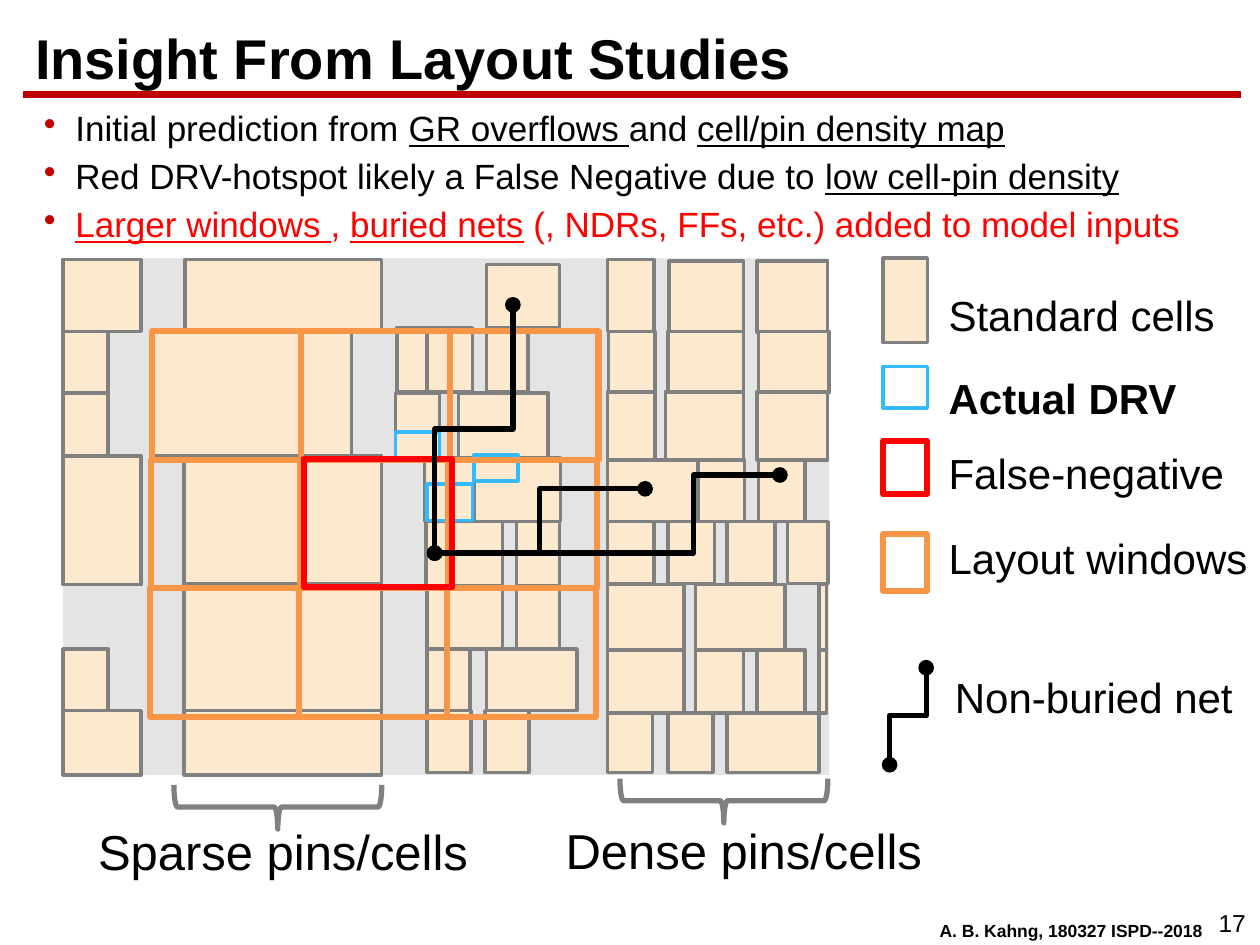
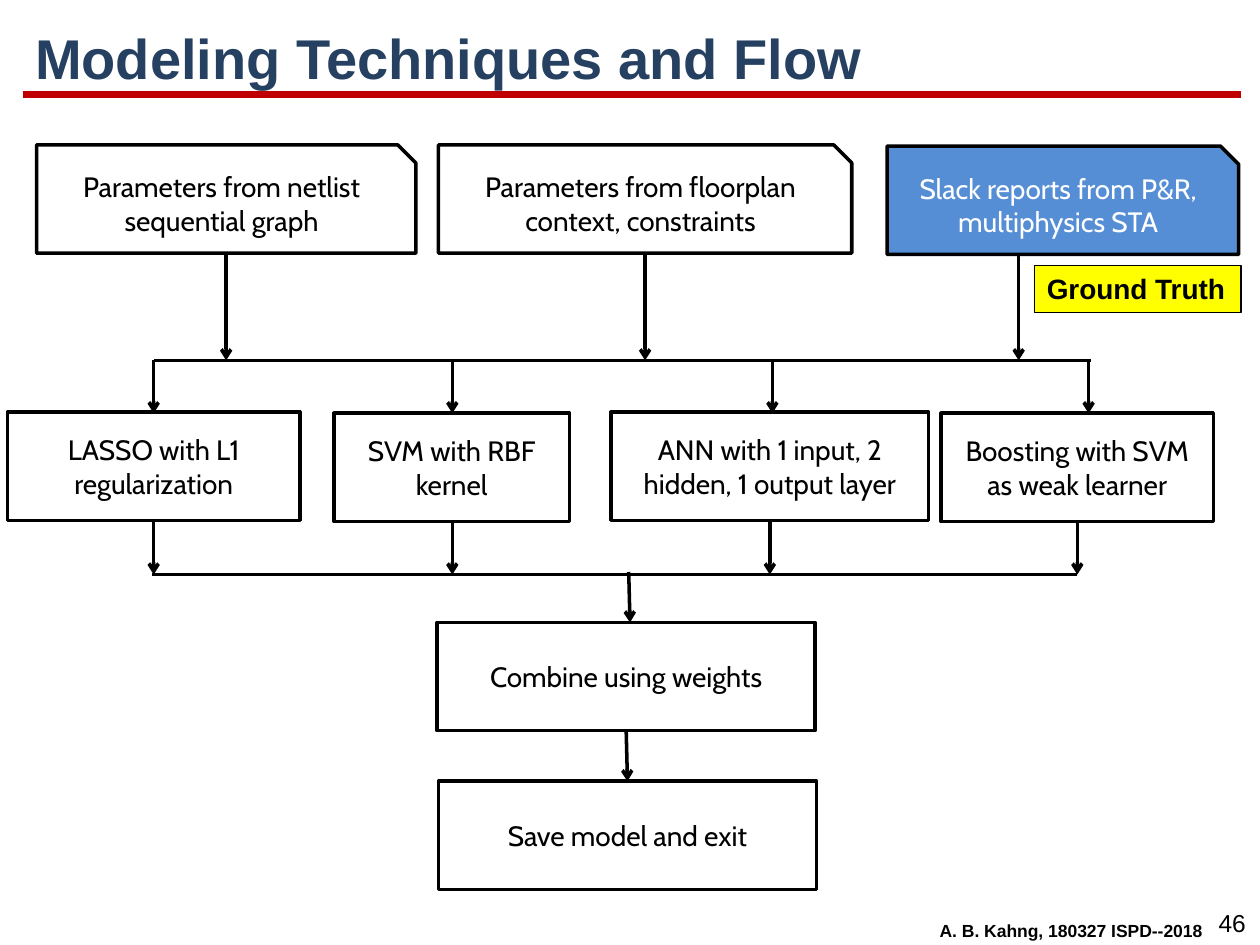
from pptx import Presentation
from pptx.dml.color import RGBColor
from pptx.enum.shapes import MSO_CONNECTOR, MSO_SHAPE
from pptx.enum.text import MSO_ANCHOR, PP_ALIGN
from pptx.oxml.ns import qn
from pptx.util import Inches, Pt
from lxml import etree

RECT = MSO_SHAPE.RECTANGLE
SNIP = MSO_SHAPE.SNIP_1_RECTANGLE
BRACE = MSO_SHAPE.LEFT_BRACE
LINE = MSO_CONNECTOR.STRAIGHT
ELBOW = MSO_CONNECTOR.ELBOW
LEFT = PP_ALIGN.LEFT
CENTER = PP_ALIGN.CENTER
TOP = MSO_ANCHOR.TOP
MIDDLE = MSO_ANCHOR.MIDDLE

BLACK = "000000"
WHITE = "FFFFFF"
NAVY = "254061"
DARK_RED = "C00000"
RED = "FF0000"
GRAY = "808080"
PALE = "E4E4E4"
CREAM = "FDE9CD"
SKY = "34BBFF"
ORANGE = "F79646"
BLUE = "558ED5"
YELLOW = "FFFF00"


def paint(code):
    return RGBColor.from_string(code)


def add_node(parent, tag, **attrs):
    return etree.SubElement(parent, qn(tag), attrs)


class Deck:
    font = "Arial"
    flow_font = "Cabin"
    credit = "A. B. Kahng, 180327 ISPD--2018"

    def __init__(self):
        self.show = Presentation()
        self.show.slide_width = Inches(10)
        self.show.slide_height = Inches(7.5)
        self.slide = None

    def start(self, title, number, color=BLACK):
        self.slide = self.show.slides.add_slide(self.show.slide_layouts[6])
        self.line((0.18, 0.75), (9.85, 0.75), DARK_RED, 4.5)
        self.label((9.56, 7.16, 0.44, 0.34), number, 14, align=CENTER, wrap=False)
        self.label((7.35, 7.25, 2.3, 0.27), self.credit, 10, align=CENTER,
                   wrap=False, bold=True)
        box = self.label((0.18, 0.16, 9.68, 0.65), title, 32, color,
                         anchor=MIDDLE, bold=True)
        box.text_frame.paragraphs[0].line_spacing = 0.9

    def piece(self, para, text, color=BLACK, **fmt):
        run = para.add_run()
        run.text = text
        run.font.color.rgb = paint(color)
        for key, value in fmt.items():
            setattr(run.font, key, value)

    def letter(self, shape, text, size, color=BLACK, align=LEFT, anchor=TOP,
               wrap=True, name=font, **fmt):
        frame = shape.text_frame
        frame.word_wrap = wrap
        frame.vertical_anchor = anchor
        para = frame.paragraphs[0]
        para.alignment = align
        self.piece(para, text, color, name=name, size=Pt(size), **fmt)

    def label(self, area, text, size, color=BLACK, **fmt):
        box = self.slide.shapes.add_textbox(*map(Inches, area))
        self.letter(box, text, size, color, **fmt)
        return box

    def points(self, area, items, size):
        frame = self.slide.shapes.add_textbox(*map(Inches, area)).text_frame
        frame.word_wrap = True
        for i, (color, parts) in enumerate(items):
            para = frame.add_paragraph() if i else frame.paragraphs[0]
            props = para._p.get_or_add_pPr()
            props.set("marL", str(Inches(0.25)))
            props.set("indent", str(-Inches(0.25)))
            add_node(add_node(props, "a:buClr"), "a:srgbClr", val=DARK_RED)
            add_node(props, "a:buChar", char="•")
            para.line_spacing = 0.85
            para.space_before = Pt(7 if i else 0)
            for text, under in parts:
                self.piece(para, text, color, name=self.font, size=Pt(size),
                           underline=under)

    def shape(self, area, fill=None, edge=None, width=2, kind=RECT, turn=0):
        shape = self.slide.shapes.add_shape(kind, *map(Inches, area))
        shape.shadow.inherit = False
        shape.rotation = turn
        if fill:
            shape.fill.solid()
            shape.fill.fore_color.rgb = paint(fill)
        else:
            shape.fill.background()
        if edge:
            shape.line.color.rgb = paint(edge)
            shape.line.width = Pt(width)
        else:
            shape.line.fill.background()
        return shape

    def step(self, area, text, kind=RECT, fill=None, color=BLACK):
        shape = self.shape(area, fill, BLACK, kind=kind)
        self.letter(shape, text, 16, color, align=CENTER, anchor=MIDDLE,
                    name=self.flow_font)

    def line(self, begin, end, color=BLACK, width=2, head=None, tail=None,
             kind=LINE):
        line = self.slide.shapes.add_connector(
            kind, *map(Inches, (*begin, *end)))
        line.line.color.rgb = paint(color)
        line.line.width = Pt(width)
        stroke = line.line._get_or_add_ln()
        for tag, mark in (("a:headEnd", head), ("a:tailEnd", tail)):
            if mark:
                add_node(stroke, tag, type=mark)
        add_node(line._element.spPr, "a:effectLst")
        return line

    def arrow(self, begin, end):
        self.line(begin, end, tail="arrow")

    def net(self, begin, end, bend=0.5, upright=False):
        if upright:
            mid_x = (begin[0] + end[0]) / 2
            mid_y = (begin[1] + end[1]) / 2
            begin, end = [(mid_x + y - mid_y, mid_y - x + mid_x)
                          for x, y in (begin, end)]
        wire = self.line(begin, end, width=3, head="oval", tail="oval", kind=ELBOW)
        props = wire._element.spPr
        if upright:
            props.find(qn("a:xfrm")).set("rot", "5400000")
        guides = props.find(qn("a:prstGeom")).find(qn("a:avLst"))
        add_node(guides, "a:gd", name="adj1", fmla=f"val {round(bend * 100000)}")


CELLS = [
    (2.06, 0.57, [(0.5, 0.62), (1.47, 1.56), (4.82, 0.37)]),
    (2.07, 0.57, [(5.31, 0.59), (6.01, 0.56)]),
    (2.1, 0.5, [(3.86, 0.58)]),
    (2.6, 0.51, [(3.15, 0.24), (3.39, 0.36), (3.86, 0.33)]),
    (2.63, 0.49, [(0.5, 0.36), (4.83, 0.37), (5.3, 0.6), (6.02, 0.56)]),
    (2.63, 0.99, [(1.22, 1.57)]),
    (3.12, 0.51, [(0.5, 0.36), (3.64, 0.71), (3.14, 0.35)]),
    (3.11, 0.54, [(4.82, 0.38), (5.28, 0.62), (6.01, 0.56)]),
    (3.62, 1.02, [(0.5, 0.62), (1.46, 1.57)]),
    (3.63, 0.51, [(3.37, 0.39), (3.76, 0.69)]),
    (3.65, 0.49, [(4.82, 0.72), (5.54, 0.37), (6.02, 0.37)]),
    (4.14, 0.51, [(3.38, 0.61), (4.1, 0.34)]),
    (4.14, 0.49, [(4.82, 0.37), (5.3, 0.37), (5.77, 0.38), (6.25, 0.32)]),
    (4.63, 1.01, [(1.46, 1.57)]),
    (4.66, 0.49, [(3.39, 0.6), (4.1, 0.34)]),
    (4.64, 0.52, [(4.82, 0.61), (5.52, 0.71), (6.5, 0.06)]),
    (5.15, 0.49, [(0.5, 0.36), (3.39, 0.34), (3.86, 0.72)]),
    (5.16, 0.5, [(4.82, 0.61), (5.52, 0.38), (6.01, 0.38), (6.5, 0.06)]),
    (5.64, 0.51, [(0.5, 0.62), (1.46, 1.57)]),
    (5.64, 0.49, [(3.39, 0.35), (3.85, 0.35)]),
    (5.66, 0.47, [(4.82, 0.36), (5.3, 0.36), (5.77, 0.73)]),
]


def draw_layout(deck):
    deck.start("Insight From Layout Studies", "17")
    deck.points((0.25, 0.85, 9.5, 6), [
        (BLACK, [("Initial prediction from ", False), ("GR overflows ", True),
                 ("and ", False), ("cell/pin density map", True)]),
        (BLACK, [("Red DRV-hotspot likely a False Negative due to ", False),
                 ("low cell-pin density", True)]),
        (RED, [("Larger windows ", True), (", ", False), ("buried nets", True),
               (" (, NDRs, FFs, etc.) added to model inputs", False)]),
    ], 20)

    deck.shape((0.5, 2.05, 6.08, 4.1), PALE)
    for top, height, spans in CELLS:
        for left, width in spans:
            deck.shape((left, top, width, height), CREAM, GRAY)
    for area in ((3.14, 3.43, 0.35, 0.21), (3.76, 3.61, 0.35, 0.21),
                 (3.39, 3.84, 0.36, 0.29)):
        deck.shape(area, edge=SKY)

    for row in range(3):
        for col in range(3):
            if (row, col) != (1, 1):
                deck.shape((1.21 + 1.18 * col - 0.01 * row, 2.63 + 1.02 * row,
                            1.18, 1.02), edge=ORANGE, width=3.5)
    deck.shape((2.41, 3.64, 1.18, 1.02), edge=RED, width=3.5)

    for left, top, width, text, brace in (
            (4.39, 6.46, 3.13, "Dense pins/cells", (5.57, 5.53)),
            (0.68, 6.47, 3.39, "Sparse pins/cells", (2.03, 5.58))):
        deck.label((left, top, width, 0.57), text, 28)
        deck.shape((*brace, 0.35, 1.65), edge=GRAY, width=3, kind=BRACE, turn=270)

    for top, height, fill, edge, width, text, base, bold in (
            (2.05, 0.67, CREAM, GRAY, 2, "Standard cells", 2.25, False),
            (2.91, 0.33, None, SKY, 2, "Actual DRV", 2.91, True),
            (3.5, 0.42, None, RED, 3.5, "False-negative", 3.5, False),
            (4.24, 0.45, None, ORANGE, 3.5, "Layout windows", 4.18, False)):
        deck.shape((7.01, top, 0.35, height), fill, edge, width)
        deck.label((7.43, base, 2.75, 0.5), text, 24, bold=bold)

    hub = (3.45, 4.39)
    deck.net(hub, (6.19, 3.77), 0.75)
    deck.net(hub, (4.07, 2.42), upright=True)
    deck.net(hub, (5.12, 3.88))
    deck.net((7.06, 6.07), (7.35, 5.3), 0.51, upright=True)
    deck.label((7.48, 5.28, 2.75, 0.5), "Non-buried net", 24)


def draw_flow(deck):
    deck.start("Modeling Techniques and Flow", "46", NAVY)
    tall = 0.86
    for left, top, width, text, fill, color in (
            (0.29, 1.15, 3.01, "Parameters from netlist sequential graph", None, BLACK),
            (3.48, 1.15, 3.28, "Parameters from floorplan context, constraints",
             None, BLACK),
            (7.04, 1.16, 2.79, "Slack reports from P&R, multiphysics STA", BLUE, WHITE)):
        deck.step((left, top, width, tall), text, SNIP, fill, color)
        mid = left + width / 2 - (0.35 if fill else 0)
        deck.arrow((mid, 2.01), (mid, 2.86))

    deck.line((8.66, 2.86), (1.22, 2.86))
    deck.line((8.55, 4.56), (1.21, 4.56))
    for left, top, width, text, into, out in (
            (0.06, 3.27, 2.32, "LASSO with L1 regularization", 1.22, 1.22),
            (2.65, 3.28, 1.87, "SVM with RBF kernel", 3.59, 3.59),
            (4.85, 3.27, 2.52, "ANN with 1 input, 2 hidden, 1 output layer", 6.13, 6.11),
            (7.47, 3.28, 2.16, "Boosting with SVM as weak learner", 8.64, 8.55)):
        deck.step((left, top, width, tall), text)
        deck.arrow((into, 2.86), (into, 3.28))
        deck.arrow((out, top + tall), (out, 4.56))

    deck.step((3.47, 4.94, 3, tall), "Combine using weights")
    deck.step((3.48, 6.2, 3, tall), "Save model and exit")
    deck.arrow((4.99, 4.54), (5, 4.94))
    deck.arrow((4.97, 5.8), (4.98, 6.2))

    truth = deck.shape((8.21, 2.11, 1.64, 0.37), YELLOW, BLACK, 0.75)
    deck.letter(truth, "Ground Truth", 16, wrap=False, bold=True)


def main():
    deck = Deck()
    draw_layout(deck)
    draw_flow(deck)
    deck.show.save("out.pptx")


if __name__ == "__main__":
    main()
